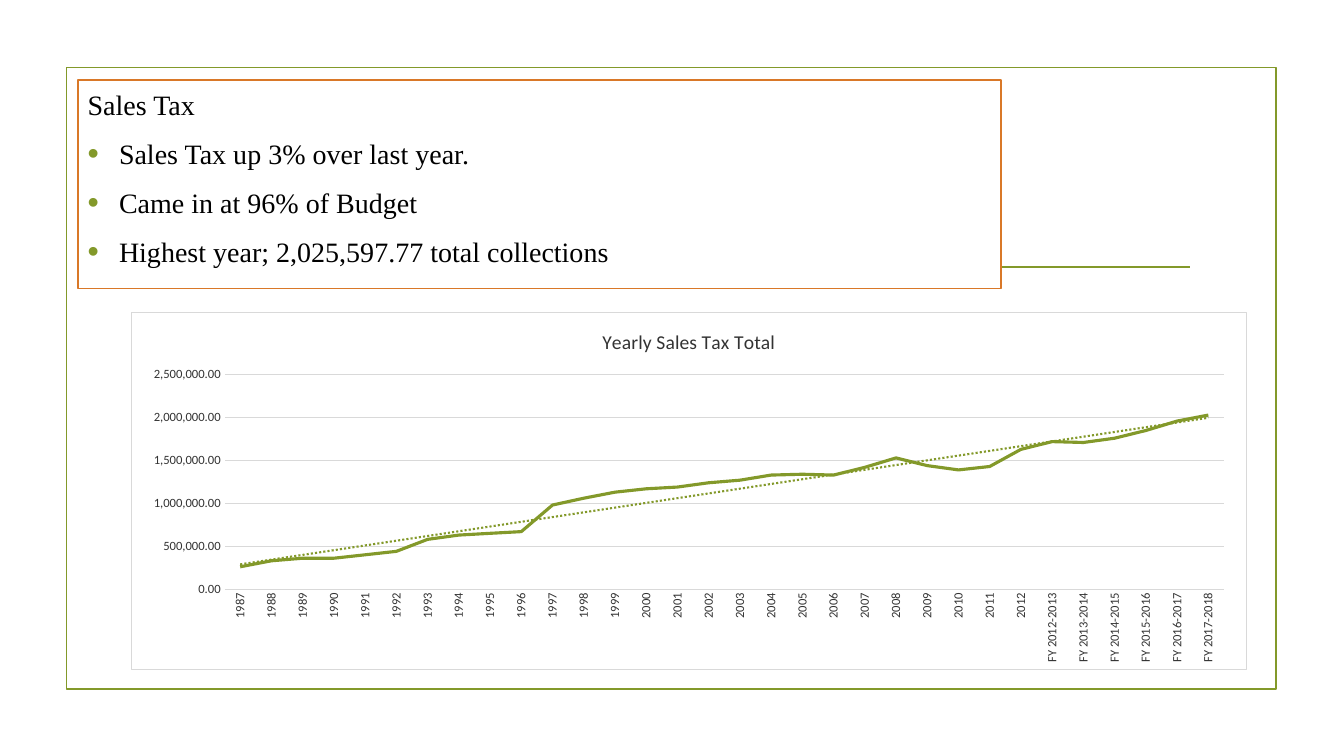
from lxml.etree import SubElement
from pptx import Presentation
from pptx.chart.data import CategoryChartData
from pptx.dml.color import RGBColor
from pptx.enum.chart import XL_CHART_TYPE, XL_MARKER_STYLE, XL_TICK_MARK
from pptx.enum.shapes import MSO_CONNECTOR, MSO_SHAPE
from pptx.enum.text import MSO_ANCHOR, PP_ALIGN
from pptx.oxml import parse_xml
from pptx.oxml.ns import nsdecls, qn
from pptx.util import Cm, Pt

HEADING = "Sales Tax"
POINTS = [
    "Sales Tax up 3% over last year.",
    "Came in at 96% of Budget",
    "Highest year; 2,025,597.77 total collections",
]
CHART_TITLE = "Yearly Sales Tax Total"
YEARS = [str(year) for year in range(1987, 2013)]
YEARS += [f"FY {year}-{year + 1}" for year in range(2012, 2018)]
COLLECTIONS_IN_THOUSANDS = [
    260, 330, 360, 360, 400, 440, 580, 630, 650, 670, 980,
    1060, 1130, 1170, 1190, 1240, 1270, 1330, 1340, 1330, 1420, 1530,
    1440, 1390, 1430, 1630, 1720, 1710, 1760, 1850, 1960, 2030,
]

GREEN, ORANGE, GRID = "83992A", "D97828", "D9D9D9"
WHITE, BLACK, LABEL = "FFFFFF", "000000", "333333"

FRAME = (1.68, 1.7, 30.48, 15.67)
RULE = (3.89, 6.73, 30, 6.73)
SUMMARY = (1.96, 2.01, 23.27, 5.26)
CHART = (3.3, 7.85, 28.12, 9.04)
BULLET_INDENT = Cm(0.79)


def color(hex_value):
    return RGBColor.from_string(hex_value)


def place(box):
    return [Cm(length) for length in box]


def set_line(line, hex_value, width):
    line.color.rgb = color(hex_value)
    line.width = Pt(width)


def set_font(font, name, size, hex_value):
    font.name = name
    font.size = Pt(size)
    font.bold = False
    font.color.rgb = color(hex_value)


def add_box(slide, box, line_color, fill_color=None):
    shape = slide.shapes.add_shape(MSO_SHAPE.RECTANGLE, *place(box))
    shape.shadow.inherit = False
    if fill_color:
        shape.fill.solid()
        shape.fill.fore_color.rgb = color(fill_color)
    else:
        shape.fill.background()
    set_line(shape.line, line_color, 1.25)
    return shape


def add_bullet(paragraph):
    properties = paragraph._p.get_or_add_pPr()
    properties.set("marL", str(BULLET_INDENT))
    properties.set("indent", str(-BULLET_INDENT))
    bullet_color = SubElement(properties, qn("a:buClr"))
    SubElement(bullet_color, qn("a:srgbClr"), val=GREEN)
    SubElement(properties, qn("a:buSzPct"), val="115000")
    SubElement(properties, qn("a:buFont"), typeface="Arial")
    SubElement(properties, qn("a:buChar"), char="•")


def add_summary(slide):
    frame = add_box(slide, SUMMARY, ORANGE, WHITE).text_frame
    frame.word_wrap = True
    frame.vertical_anchor = MSO_ANCHOR.TOP
    frame.margin_top = Cm(0.2)
    frame.text = "\n".join([HEADING, *POINTS])
    for index, paragraph in enumerate(frame.paragraphs):
        paragraph.alignment = PP_ALIGN.LEFT
        paragraph.space_after = Pt(6)
        if index:
            paragraph.space_before = Pt(5)
            add_bullet(paragraph)
        for run in paragraph.runs:
            set_font(run.font, "Times New Roman", 20, BLACK)


def line_xml(hex_value, width, dash="solid"):
    return (f'<a:ln w="{Pt(width)}"><a:solidFill><a:srgbClr val="{hex_value}"/></a:solidFill>'
            f'<a:prstDash val="{dash}"/></a:ln>')


def style_axes(chart):
    for axis in (chart.category_axis, chart.value_axis):
        axis.major_tick_mark = XL_TICK_MARK.NONE
        axis.minor_tick_mark = XL_TICK_MARK.NONE
        set_font(axis.tick_labels.font, "Calibri", 9, LABEL)
    years, amounts = chart.category_axis, chart.value_axis
    set_line(years.format.line, GRID, 0.75)
    years._element.find(qn("c:txPr")).find(qn("a:bodyPr")).set("rot", "-5400000")
    amounts.format.line.fill.background()
    amounts.minimum_scale, amounts.maximum_scale = 0, 2500000
    amounts.major_unit = 500000
    amounts.tick_labels.number_format = "#,##0.00"
    amounts.tick_labels.number_format_is_linked = False
    set_line(amounts.major_gridlines.format.line, GRID, 0.75)


def add_tax_chart(slide):
    data = CategoryChartData()
    data.categories = YEARS
    data.add_series("Series 1", [value * 1000 for value in COLLECTIONS_IN_THOUSANDS])
    chart = slide.shapes.add_chart(XL_CHART_TYPE.LINE, *place(CHART), data).chart
    set_font(chart.font, "Calibri", 10, BLACK)
    chart.has_legend = False
    chart.has_title = True
    title = chart.chart_title
    title.include_in_layout = False
    title.text_frame.text = CHART_TITLE
    set_font(title.text_frame.paragraphs[0].runs[0].font, "Calibri", 14, LABEL)
    style_axes(chart)

    chart.plots[0].vary_by_categories = False
    collections = chart.plots[0].series[0]
    collections.smooth = False
    collections.marker.style = XL_MARKER_STYLE.NONE
    set_line(collections.format.line, GREEN, 2.25)
    trend = parse_xml(
        f'<c:trendline {nsdecls("c", "a")}><c:spPr>{line_xml(GREEN, 1.5, "sysDot")}</c:spPr>'
        '<c:trendlineType val="linear"/><c:dispRSqr val="0"/><c:dispEq val="0"/></c:trendline>')
    collections._element.find(qn("c:cat")).addprevious(trend)
    border = parse_xml(
        f'<c:spPr {nsdecls("c", "a")}><a:solidFill><a:srgbClr val="{WHITE}"/></a:solidFill>'
        f'{line_xml(GRID, 0.75)}</c:spPr>')
    chart._chartSpace.find(qn("c:chart")).addnext(border)


def main():
    deck = Presentation()
    deck.slide_width, deck.slide_height = Cm(33.87), Cm(19.05)
    slide = deck.slides.add_slide(deck.slide_layouts[6])
    add_box(slide, FRAME, GREEN)
    rule = slide.shapes.add_connector(MSO_CONNECTOR.STRAIGHT, *place(RULE))
    set_line(rule.line, GREEN, 1.25)
    SubElement(rule._element.spPr, qn("a:effectLst"))
    add_summary(slide)
    add_tax_chart(slide)
    deck.save("out.pptx")


if __name__ == "__main__":
    main()
